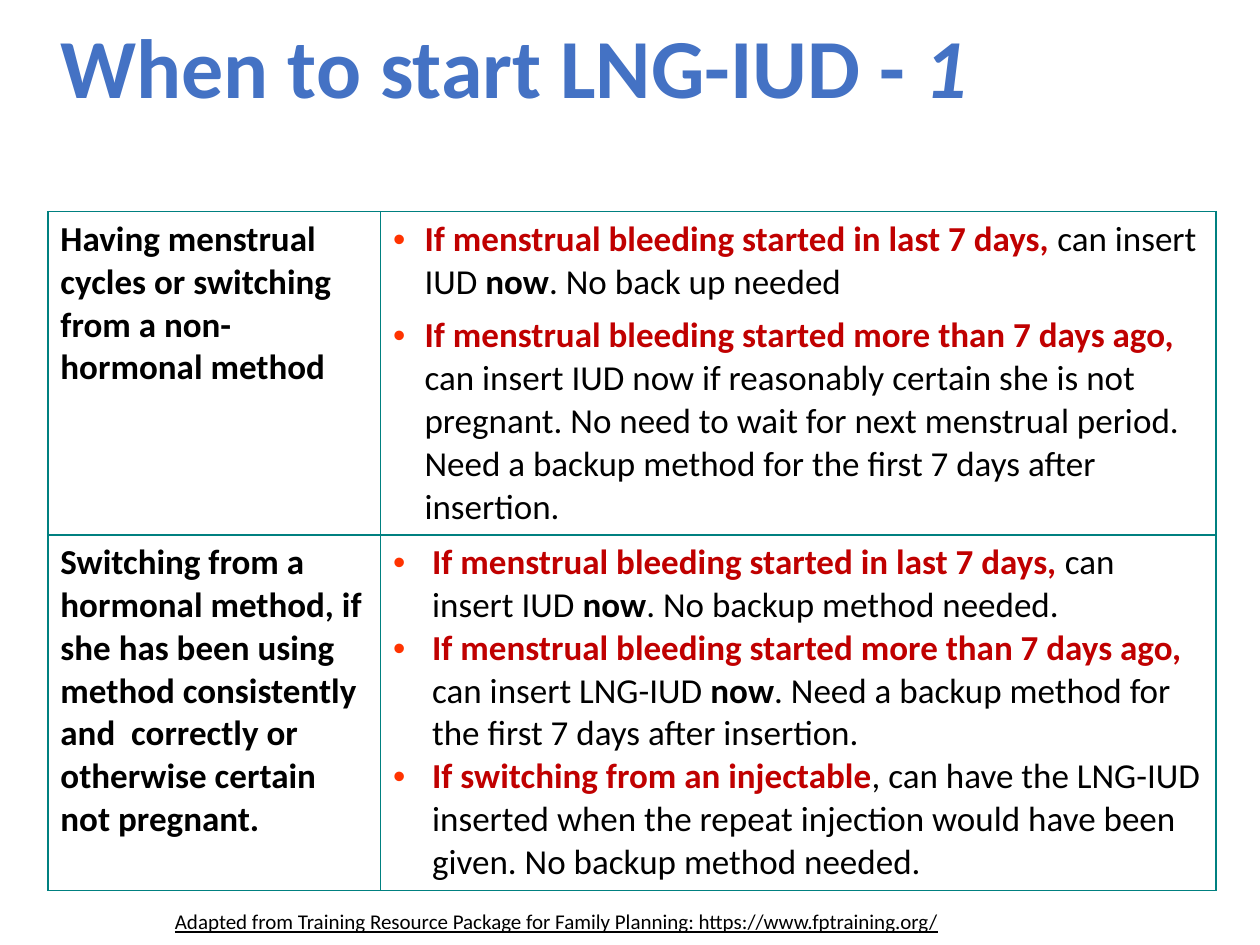
from dataclasses import dataclass

from lxml import etree
from pptx import Presentation
from pptx.dml.color import RGBColor
from pptx.enum.text import MSO_ANCHOR, MSO_AUTO_SIZE, PP_ALIGN
from pptx.oxml.ns import qn
from pptx.util import Inches, Pt

LEFT = PP_ALIGN.LEFT
TOP, MIDDLE = MSO_ANCHOR.TOP, MSO_ANCHOR.MIDDLE
NO_FIT = MSO_AUTO_SIZE.NONE
TITLE_ONLY = 5


@dataclass(frozen=True)
class Theme:
    font: str = "Calibri"
    title: str = "4472C4"
    text: str = "000000"
    key: str = "C00000"
    bullet: str = "FF3300"
    border: str = "008080"
    title_size: int = 48
    body_size: int = 20
    source_size: int = 12
    border_width: int = 1


@dataclass(frozen=True)
class Span:
    text: str
    bold: bool = False
    color: str = Theme.text


@dataclass(frozen=True)
class Situation:
    """One table row: who she is, and the bulleted advice for her."""
    who: str
    advice: list[list[Span]]
    indent: float
    gap: int
    height: float


THEME = Theme()
COLUMN_WIDTHS = (2.64, 6.63)


def key(text: str) -> Span:
    return Span(text, True, THEME.key)


RECENT = key("If menstrual bleeding started in last 7 days, ")
EARLIER = key("If menstrual bleeding started more than 7 days ago, ")
NOW = Span("now", True)

SITUATIONS = [
    Situation(
        "Having menstrual cycles or switching from a non-hormonal method",
        [
            [RECENT, Span("can insert IUD "), NOW, Span(". No back up needed")],
            [EARLIER, Span("can insert IUD now if reasonably certain she is not pregnant. "
                           "No need to wait for next menstrual period. Need a backup "
                           "method for the first 7 days after insertion.")],
        ],
        indent=0.25, gap=6, height=2.46),
    Situation(
        "Switching from a hormonal method, if she has been using method consistently "
        "and  correctly or otherwise certain not pregnant.",
        [
            [RECENT, Span("can insert IUD "), NOW, Span(". No backup method needed.")],
            [EARLIER, Span("can insert LNG-IUD "), NOW,
             Span(". Need a backup method for the first 7 days after insertion.")],
            [key("If switching from an injectable"),
             Span(", can have the LNG-IUD inserted when the repeat injection would "
                  "have been given. No backup method needed.")],
        ],
        indent=0.31, gap=0, height=2.69),
]


def add_span(para, text: str, size: int, color: str, **formats) -> None:
    run = para.add_run()
    run.text = text
    run.font.color.rgb = RGBColor.from_string(color)
    for name, value in {"name": THEME.font, "size": Pt(size), **formats}.items():
        setattr(run.font, name, value)


def set_bullet(para, indent: float) -> None:
    properties = para._p.get_or_add_pPr()
    properties.set("marL", str(Inches(indent)))
    properties.set("indent", str(-Inches(indent)))
    color = etree.SubElement(properties, qn("a:buClr"))
    etree.SubElement(color, qn("a:srgbClr"), val=THEME.bullet)
    etree.SubElement(properties, qn("a:buFont"), typeface="Arial")
    etree.SubElement(properties, qn("a:buChar"), char="•")


def style_cell(cell) -> None:
    cell.fill.background()
    cell.vertical_anchor = TOP
    properties = cell._tc.get_or_add_tcPr()
    for position, side in enumerate(("lnL", "lnR", "lnT", "lnB")):
        line = etree.Element(qn(f"a:{side}"), w=str(Pt(THEME.border_width)))
        fill = etree.SubElement(line, qn("a:solidFill"))
        etree.SubElement(fill, qn("a:srgbClr"), val=THEME.border)
        properties.insert(position, line)


def add_title(page) -> None:
    title = page.shapes.title
    box = {"left": 0.38, "top": 0.29, "width": 9, "height": 0.58}
    for name, value in box.items():
        setattr(title, name, Inches(value))
    frame = title.text_frame
    frame.auto_size = NO_FIT
    frame.vertical_anchor = MIDDLE
    para = frame.paragraphs[0]
    para.alignment = LEFT
    para.line_spacing = 0.85
    for text, italic in (("When to start LNG-IUD - ", False), ("1", True)):
        add_span(para, text, THEME.title_size, THEME.title, bold=True, italic=italic)


def fill_row(row, situation: Situation) -> None:
    row.height = Inches(situation.height)
    who, advice = row.cells
    for cell in (who, advice):
        style_cell(cell)
    add_span(who.text_frame.paragraphs[0], situation.who,
             THEME.body_size, THEME.text, bold=True)
    frame = advice.text_frame
    for number, spans in enumerate(situation.advice):
        para = frame.add_paragraph() if number else frame.paragraphs[0]
        if number:
            para.space_before = Pt(situation.gap)
        set_bullet(para, situation.indent)
        for span in spans:
            add_span(para, span.text, THEME.body_size, span.color, bold=span.bold)


def add_situation_table(page) -> None:
    height = sum(situation.height for situation in SITUATIONS)
    table = page.shapes.add_table(
        len(SITUATIONS), len(COLUMN_WIDTHS), Inches(0.38), Inches(1.68),
        Inches(sum(COLUMN_WIDTHS)), Inches(height)).table
    table.first_row = table.horz_banding = False
    for column, width in zip(table.columns, COLUMN_WIDTHS):
        column.width = Inches(width)
    for row, situation in zip(table.rows, SITUATIONS):
        fill_row(row, situation)


def add_source_line(page) -> None:
    box = page.shapes.add_textbox(Inches(1.29), Inches(7.16), Inches(6.94), Inches(0.27))
    box.text_frame.word_wrap = True
    add_span(box.text_frame.paragraphs[0],
             "Adapted from Training Resource Package for Family Planning: "
             "https://www.fptraining.org/",
             THEME.source_size, THEME.text, underline=True)


def main() -> None:
    deck = Presentation()
    deck.slide_width, deck.slide_height = Inches(10), Inches(7.5)
    page = deck.slides.add_slide(deck.slide_layouts[TITLE_ONLY])
    add_title(page)
    add_situation_table(page)
    add_source_line(page)
    deck.save("out.pptx")


if __name__ == "__main__":
    main()
